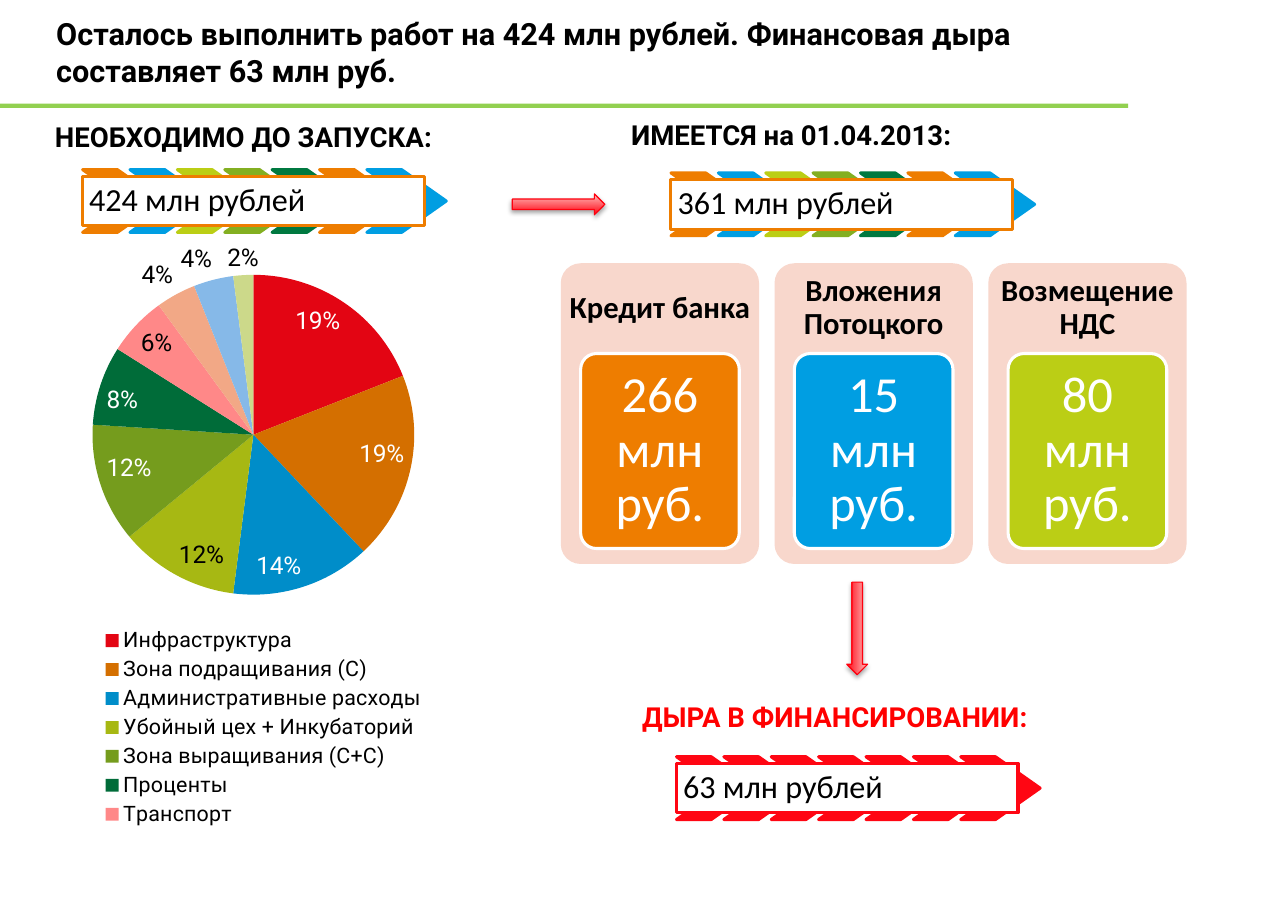
from lxml import etree
from pptx import Presentation
from pptx import util as u
from pptx.chart import data as chart_data
from pptx.dml import color
from pptx.enum import chart as charts, shapes, text
from pptx.oxml import parse_xml
from pptx.oxml import ns

PX = 9144
ORANGE, BLUE, LIME, GREEN, PINE = "EE7D00", "009EE2", "BBCE15", "83AF21", "007940"
RED, BLACK, WHITE = "FF0613", "000000", "FFFFFF"
RAINBOW = [ORANGE, BLUE, LIME, GREEN, PINE, ORANGE, BLUE]
COSTS = [
    ("Инфраструктура", 19, "E30513", WHITE),
    ("Зона подращивания (С)", 19, "D46F00", WHITE),
    ("Административные расходы", 14, "008DC9", WHITE),
    ("Убойный цех + Инкубаторий", 12, "A7B813", BLACK),
    ("Зона выращивания (С+С)", 12, "759C1D", WHITE),
    ("Проценты", 8, "006C39", WHITE),
    ("Транспорт", 6, "FF8888", BLACK),
    ("", 4, "F2A886", BLACK),
    ("", 4, "86B9E8", BLACK),
    ("", 2, "CCD98A", BLACK),
]
NAMED_COSTS = 7
FUNDS = [
    ("Кредит банка", "266 млн руб.", ORANGE),
    ("Вложения Потоцкого", "15 млн руб.", BLUE),
    ("Возмещение НДС", "80 млн руб.", LIME),
]


def rgb(value):
    return color.RGBColor.from_string(value)


def set_font(font, name, size, ink, bold=False):
    font.name, font.size, font.bold = name, u.Pt(size), bold
    font.color.rgb = rgb(ink)


def write(shape, words, name, size, ink=BLACK, bold=False, margins=(10, 5),
          align=text.PP_ALIGN.LEFT, spacing=1.0, anchor=text.MSO_ANCHOR.MIDDLE):
    frame = shape.text_frame
    frame.word_wrap = True
    frame.vertical_anchor = anchor
    frame.margin_left = frame.margin_right = margins[0] * PX
    frame.margin_top = frame.margin_bottom = margins[1] * PX
    paragraph = frame.paragraphs[0]
    paragraph.text = words
    paragraph.alignment = align
    paragraph.line_spacing = spacing
    set_font(paragraph.font, name, size, ink, bold)


def add_block(parent, kind, box, fill, line=None, adjust=None):
    block = parent.add_shape(kind, *(n * PX for n in box))
    block.shadow.inherit = False
    block.fill.solid()
    block.fill.fore_color.rgb = rgb(fill)
    if line:
        block.line.color.rgb = rgb(line)
        block.line.width = u.Pt(2)
    else:
        block.line.fill.background()
    if adjust is not None:
        block.adjustments[0] = adjust
    return block


def add_text(slide, box, words, **style):
    label = slide.shapes.add_textbox(*(n * PX for n in box))
    write(label, words, **style)


def add_header(slide, left, top, width, height):
    add_block(slide.shapes, shapes.MSO_SHAPE.RECTANGLE, (left, top + height, 1024, 4), "92D050")
    add_text(slide, (left + 40, top, width, height),
             "Осталось выполнить работ на 424 млн рублей. Финансовая дыра составляет 63 млн руб.",
             name="Roboto", size=20, bold=True, margins=(11, 6))


def add_heading(slide, left, top, words, ink=BLACK):
    add_text(slide, (left, top, 430, 40), words, name="Roboto", size=18, ink=ink,
             bold=True, anchor=text.MSO_ANCHOR.TOP)


def add_banner(slide, left, top, amount, palette):
    banner = slide.shapes.add_group_shape().shapes
    for i, tint in enumerate(palette):
        add_block(banner, shapes.MSO_SHAPE.CHEVRON, (left + 43 * i, top, 72, 57),
                  tint, tint, 0.71)
    bar = add_block(banner, shapes.MSO_SHAPE.RECTANGLE, (left, top + 6, 310, 45),
                    WHITE, palette[0])
    write(bar, amount, "Calibri", 21, margins=(6, 6), spacing=0.9)


def add_fund(slide, left, top, source, amount, tint):
    rounded = shapes.MSO_SHAPE.ROUNDED_RECTANGLE
    add_block(slide.shapes, rounded, (left, top, 180, 273), "F8D7CC", adjust=0.1)
    add_text(slide, (left, top, 180, 82), source, name="Calibri", size=20, bold=True,
             margins=(8, 8), align=text.PP_ALIGN.CENTER, spacing=0.9)
    sum_tile = add_block(slide.shapes, rounded, (left + 18, top + 82, 144, 177),
                         tint, WHITE, 0.1)
    write(sum_tile, amount, "Calibri", 33, WHITE, margins=(13, 11),
          align=text.PP_ALIGN.CENTER, spacing=0.9)


def add_flow_arrow(slide, left, top, rotation=0):
    arrow = add_block(slide.shapes, shapes.MSO_SHAPE.RIGHT_ARROW, (left, top, 84, 19), RED, "FF000E")
    arrow.rotation = rotation
    arrow.line.width = u.Pt(0.75)
    arrow.fill.gradient()
    arrow.fill.gradient_angle = 90
    for stop, tint in zip(arrow.fill.gradient_stops, (RED, "FFBDBD")):
        stop.color.rgb = rgb(tint)
    effects = arrow._element.spPr.find(ns.qn("a:effectLst"))
    shadow = etree.SubElement(effects, ns.qn("a:outerShdw"), blurRad="39370",
                              dist="22860", dir="5400000", rotWithShape="0")
    black = etree.SubElement(shadow, ns.qn("a:srgbClr"), val=BLACK)
    etree.SubElement(black, ns.qn("a:alpha"), val="35000")


def place_in_chart(holder, index, left, top, width, height, target=""):
    for old in holder.findall(ns.qn("c:layout")):
        holder.remove(old)
    modes = '<c:xMode val="edge"/><c:yMode val="edge"/>'
    holder.insert(index, parse_xml(
        f'<c:layout {ns.nsdecls("c")}><c:manualLayout>{target}{modes}'
        f'<c:x val="{left}"/><c:y val="{top}"/><c:w val="{width}"/><c:h val="{height}"/>'
        '</c:manualLayout></c:layout>'))


def label_share(point, ink, position):
    label = point.data_label
    set_font(label.font, "Roboto", 16, ink)
    label.position = position
    mark = label._dLbl
    mark.find(ns.qn("c:showVal")).set("val", "0")
    mark.find(ns.qn("c:showPercent")).set("val", "1")
    mark.find(ns.qn("c:idx")).addnext(parse_xml(
        f'<c:numFmt {ns.nsdecls("c")} formatCode="0%" sourceLinked="0"/>'))


def add_cost_pie(slide, left, top, width, height):
    costs = chart_data.CategoryChartData()
    costs.categories = [cost[0] for cost in COSTS]
    costs.add_series("Series 1", [cost[1] for cost in COSTS])
    pie = slide.shapes.add_chart(charts.XL_CHART_TYPE.PIE, left * PX, top * PX,
                                 width * PX, height * PX, costs).chart
    pie.has_title = False
    set_font(pie.font, "Calibri", 10, BLACK)
    pie.plots[0].vary_by_categories = True
    shares = pie.plots[0].series[0]
    for i, (_, _, tint, ink) in enumerate(COSTS):
        point = shares.points[i]
        point.format.fill.solid()
        point.format.fill.fore_color.rgb = rgb(tint)
        label_share(point, ink, charts.XL_LABEL_POSITION.INSIDE_END if i < NAMED_COSTS
                    else charts.XL_LABEL_POSITION.OUTSIDE_END)
    shares.data_labels.show_value = False
    shares.data_labels.show_percentage = True
    plot_area = pie._chartSpace.chart.plotArea
    place_in_chart(plot_area, 0, 0.05, 0.05, 0.53, 0.53, '<c:layoutTarget val="inner"/>')

    pie.has_legend = True
    legend = pie.legend
    legend.position = charts.XL_LEGEND_POSITION.RIGHT
    legend.include_in_layout = False
    set_font(legend.font, "Roboto", 14, BLACK)
    place_in_chart(legend._element, 1, 0.08, 0.63, 0.5, 0.34)
    for i in reversed(range(NAMED_COSTS, len(COSTS))):
        legend._element.insert(1, parse_xml(
            f'<c:legendEntry {ns.nsdecls("c")}><c:idx val="{i}"/>'
            '<c:delete val="1"/></c:legendEntry>'))


def main():
    deck = Presentation()
    deck.slide_width, deck.slide_height = 1169 * PX, 827 * PX
    slide = deck.slides.add_slide(deck.slide_layouts[6])
    add_header(slide, 0, 0, 983, 94)
    add_banner(slide, 75, 154, "424 млн рублей", RAINBOW)
    add_cost_pie(slide, 35, 219, 619, 551)
    add_heading(slide, 40, 104, "НЕОБХОДИМО ДО ЗАПУСКА:")
    add_banner(slide, 609, 157, "361 млн рублей", RAINBOW)
    add_heading(slide, 563, 102, "ИМЕЕТСЯ на 01.04.2013:")
    for i, fund in enumerate(FUNDS):
        add_fund(slide, 509 + 194 * i, 239, *fund)
    add_banner(slide, 614, 687, "63 млн рублей", [RED] * len(RAINBOW))
    add_heading(slide, 573, 631, "ДЫРА В ФИНАНСИРОВАНИИ:", "FF0000")
    add_flow_arrow(slide, 465, 176)
    add_flow_arrow(slide, 736, 561, 90)
    deck.save("out.pptx")


if __name__ == "__main__":
    main()
